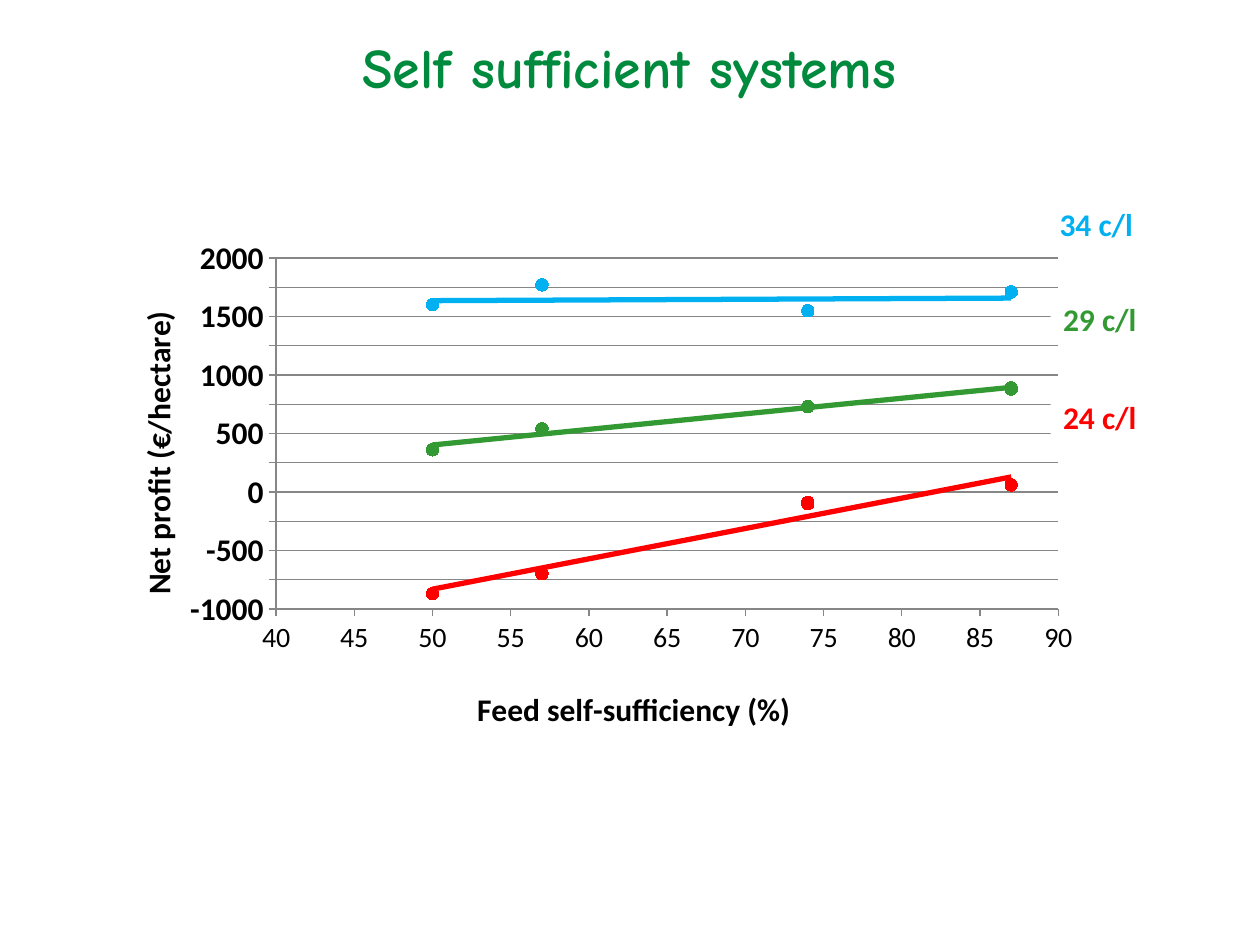
import pptx
import pptx.chart.data
import pptx.dml.color
import pptx.enum.chart
import pptx.enum.text
import pptx.oxml
import pptx.oxml.ns
import pptx.util

Cm = pptx.util.Cm
Pt = pptx.util.Pt
RGB = pptx.dml.color.RGBColor
RED = RGB(0xFF, 0x00, 0x00)
GREEN = RGB(0x33, 0x99, 0x33)
BLUE = RGB(0x00, 0xB0, 0xF0)
TITLE_GREEN = RGB(0x00, 0x8A, 0x3E)
GRAY = RGB(0x86, 0x86, 0x86)
BLACK = RGB(0, 0, 0)
WHITE = RGB(255, 255, 255)

SELF_SUFFICIENCY = (74, 50, 74, 87, 57, 87)
SERIES = (
    ("Series 1", (-100, -870, -90, 60, -700, 60), RED),
    ("Series 2", (730, 360, 730, 880, 540, 890), GREEN),
    ("Series 3", (1550, 1600, 1550, 1710, 1770, 1710), BLUE),
)
PRICES = (
    ("34 c/l", 21.11, 4.01, BLUE),
    ("29 c/l", 21.18, 5.92, GREEN),
    ("24 c/l", 21.18, 7.9, RED),
)


def add_text(slide, text, left, top, width, height, *, size, color,
             font="Calibri", align=pptx.enum.text.PP_ALIGN.LEFT,
             anchor=pptx.enum.text.MSO_ANCHOR.TOP, wrap=False, fill=None):
    sp = slide.shapes.add_textbox(Cm(left), Cm(top), Cm(width), Cm(height))
    if fill is not None:
        sp.fill.solid()
        sp.fill.fore_color.rgb = fill
    tf = sp.text_frame
    tf.word_wrap = wrap
    tf.vertical_anchor = anchor
    p = tf.paragraphs[0]
    p.alignment = align
    r = p.add_run()
    r.text = text
    format_font(r.font, size, color=color, name=font)


def format_font(font, size, bold=True, color=BLACK, name="Calibri"):
    font.size = Pt(size)
    font.bold = bold
    font.color.rgb = color
    font.name = name


def layout_xml(x, y, w=None, h=None):
    inner = '<c:layoutTarget val="inner"/>' if w else ""
    size = f'<c:w val="{w}"/><c:h val="{h}"/>' if w else ""
    return pptx.oxml.parse_xml(
        f'<c:layout {pptx.oxml.ns.nsdecls("c")}><c:manualLayout>{inner}'
        '<c:xMode val="edge"/><c:yMode val="edge"/>'
        f'<c:x val="{x}"/><c:y val="{y}"/>{size}</c:manualLayout></c:layout>')


def set_layout(element, layout):
    tag = pptx.oxml.ns.qn("c:layout")
    for old in element.findall(tag):
        element.remove(old)
    tx = element.find(pptx.oxml.ns.qn("c:tx"))
    if tx is None:
        element.insert(0, layout)
    else:
        tx.addnext(layout)


def format_axis(axis, title, low, high, step, size, bold, title_at):
    axis.minimum_scale, axis.maximum_scale = low, high
    axis.major_unit = step
    axis.major_tick_mark = pptx.enum.chart.XL_TICK_MARK.OUTSIDE
    axis.minor_tick_mark = pptx.enum.chart.XL_TICK_MARK.NONE
    axis.format.line.color.rgb = GRAY
    axis.tick_labels.number_format = "General"
    axis.tick_labels.number_format_is_linked = False
    format_font(axis.tick_labels.font, size, bold)
    tf = axis.axis_title.text_frame
    tf.text = title
    format_font(tf.paragraphs[0].runs[0].font, 18)
    set_layout(axis.axis_title._element, layout_xml(*title_at))


def format_series(series, color):
    series.format.line.fill.background()
    series.smooth = False
    marker = series.marker
    marker.style = pptx.enum.chart.XL_MARKER_STYLE.CIRCLE
    marker.size = 7
    marker.format.fill.solid()
    marker.format.fill.fore_color.rgb = color
    marker.format.line.color.rgb = color
    trend = pptx.oxml.parse_xml(
        f'<c:trendline {pptx.oxml.ns.nsdecls("c", "a")}><c:spPr>'
        f'<a:ln w="{Pt(3)}"><a:solidFill><a:srgbClr val="{color}"/>'
        '</a:solidFill></a:ln></c:spPr><c:trendlineType val="linear"/>'
        '<c:dispRSqr val="0"/><c:dispEq val="0"/></c:trendline>')
    series._element.find(pptx.oxml.ns.qn("c:xVal")).addprevious(trend)


def add_profit_chart(slide):
    data = pptx.chart.data.XyChartData()
    for name, profits, _ in SERIES:
        series = data.add_series(name)
        for x, y in zip(SELF_SUFFICIENCY, profits):
            series.add_data_point(x, y)
    chart = slide.shapes.add_chart(
        pptx.enum.chart.XL_CHART_TYPE.XY_SCATTER,
        Cm(1.83), Cm(4.6), Cm(20.19), Cm(10.39), data).chart
    chart.has_legend = False
    chart.has_title = False
    format_font(chart.font, 10, False)
    plot = chart.plots[0]
    plot.vary_by_categories = False
    for series, (_, _, color) in zip(plot.series, SERIES):
        format_series(series, color)
    x_axis, y_axis = chart.category_axis, chart.value_axis
    format_axis(x_axis, "Feed self-sufficiency (%)", 40, 90, 5, 16, False,
                (0.38, 0.88))
    format_axis(y_axis, "Net profit (€/hectare)", -1000, 2000, 250, 18, True,
                (0.04, 0.15))
    x_axis.has_major_gridlines = False
    y_axis.has_major_gridlines = True
    y_axis.major_gridlines.format.line.color.rgb = GRAY
    y_axis.crosses = pptx.enum.chart.XL_AXIS_CROSSES.MINIMUM
    plot_area = chart._chartSpace.chart.plotArea
    set_layout(plot_area, layout_xml(0.185, 0.058, 0.781, 0.681))


def main():
    prs = pptx.Presentation()
    prs.slide_width, prs.slide_height = Cm(25.4), Cm(19.05)
    s = prs.slides.add_slide(prs.slide_layouts[6])
    add_text(s, "Self sufficient systems", 0.69, 0.74, 24, 1.17, size=32,
             color=TITLE_GREEN, font="Comic Neue", wrap=True,
             align=pptx.enum.text.PP_ALIGN.CENTER,
             anchor=pptx.enum.text.MSO_ANCHOR.MIDDLE)
    add_profit_chart(s)
    for text, left, top, color in PRICES:
        add_text(s, text, left, top, 2.11, 1.02, size=18, color=color,
                 fill=WHITE)
    prs.save("out.pptx")


if __name__ == "__main__":
    main()
